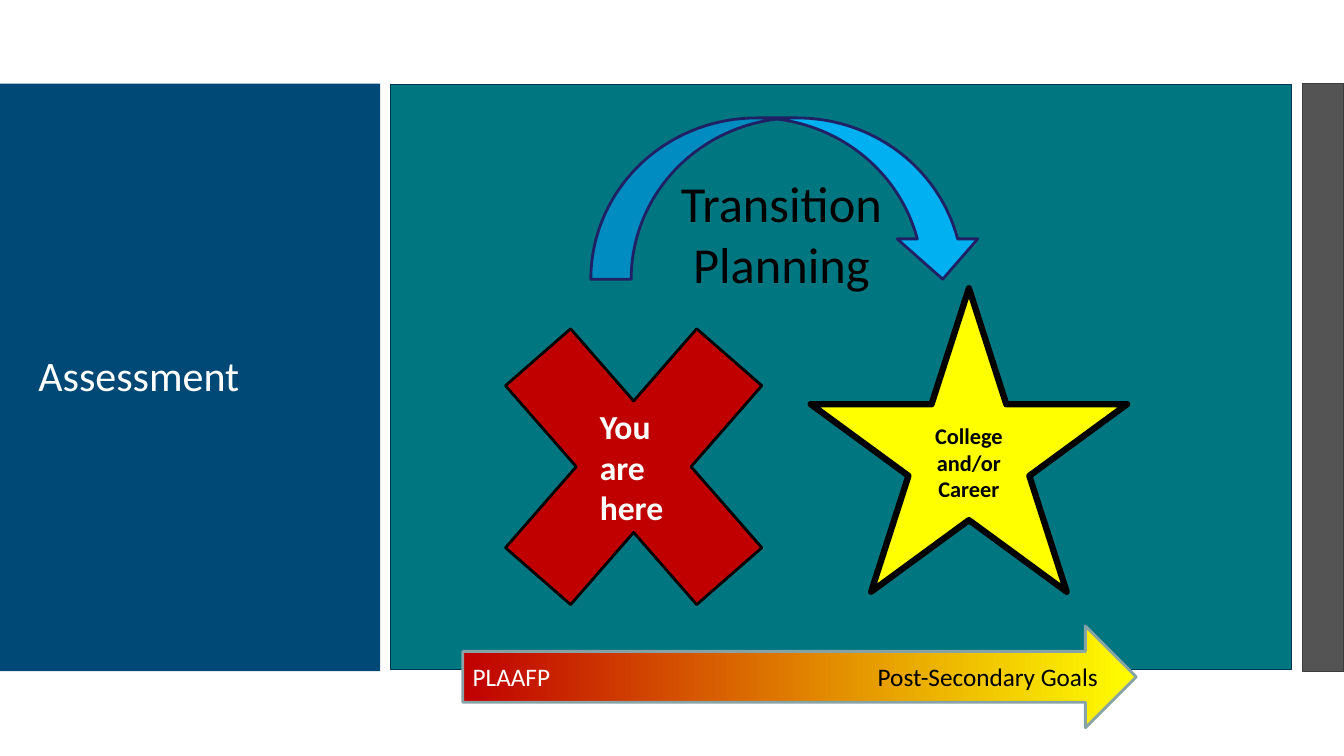
from pptx import Presentation
from pptx.dml.color import RGBColor
from pptx.enum.shapes import MSO_SHAPE
from pptx.enum.text import MSO_ANCHOR, MSO_AUTO_SIZE, PP_ALIGN
from pptx.oxml import parse_xml
from pptx.oxml.ns import nsdecls
from pptx.util import Inches, Pt

RECTANGLE = MSO_SHAPE.RECTANGLE
CROSS = MSO_SHAPE.MATH_MULTIPLY
STAR = MSO_SHAPE.STAR_5_POINT
CURVED_ARROW = MSO_SHAPE.CURVED_DOWN_ARROW
RIGHT_ARROW = MSO_SHAPE.RIGHT_ARROW
LEFT, CENTER = PP_ALIGN.LEFT, PP_ALIGN.CENTER
TOP, MIDDLE = MSO_ANCHOR.TOP, MSO_ANCHOR.MIDDLE
NO_AUTOFIT = MSO_AUTO_SIZE.NONE

FONT = "Calibri"
TITLE_ONLY = 5
COLORS = {
    "navy": "004976", "teal": "007681", "teal_edge": "003556",
    "gray": "545454", "gray_edge": "3D3D3D", "red": "C00000",
    "yellow": "FFFF00", "sky": "00B0F0", "indigo": "202064",
    "mist": "88A3A5", "black": "000000", "white": "FFFFFF",
}


def color(name):
    """Return the named palette colour."""
    return RGBColor.from_string(COLORS[name])


def inches(*values):
    """Convert several numbers to lengths."""
    return [Inches(value) for value in values]


def add_preset(slide, kind, box, fill=None, line=None, width=1, adjustments=()):
    """Add a flat preset shape in the given box."""
    shape = slide.shapes.add_shape(kind, *inches(*box))
    shape.shadow.inherit = False
    if fill:
        shape.fill.solid()
        shape.fill.fore_color.rgb = color(fill)
    if line:
        shape.line.color.rgb = color(line)
        shape.line.width = Pt(width)
    else:
        shape.line.fill.background()
    for index, value in enumerate(adjustments):
        shape.adjustments[index] = value
    return shape


def write_text(shape, *paragraphs, size, name="black", bold=False, align=LEFT,
               anchor=TOP, spacing=None, right_tab=None):
    """Fill a shape with paragraphs, each a list of (text, colour) runs or a string."""
    frame = shape.text_frame
    frame.word_wrap = True
    frame.auto_size = NO_AUTOFIT
    frame.vertical_anchor = anchor
    for index, content in enumerate(paragraphs):
        paragraph = frame.paragraphs[0] if index == 0 else frame.add_paragraph()
        paragraph.alignment = align
        if spacing:
            paragraph.line_spacing = spacing
        if right_tab:
            paragraph._p.get_or_add_pPr().append(parse_xml(
                f'<a:tabLst {nsdecls("a")}>'
                f'<a:tab pos="{Inches(right_tab)}" algn="r"/></a:tabLst>'))
        runs = [(content, name)] if isinstance(content, str) else content
        for text, run_color in runs:
            run = paragraph.add_run()
            run.text = text
            run.font.name = FONT
            run.font.size = Pt(size)
            run.font.bold = bold
            run.font.color.rgb = color(run_color)


def add_label(slide, box, *paragraphs, **text_format):
    """Add a text box."""
    write_text(slide.shapes.add_textbox(*inches(*box)), *paragraphs, **text_format)


def add_title_panel(slide, box):
    """Draw the navy panel with the slide title in front of it."""
    left, top, width, height = box
    add_preset(slide, RECTANGLE, box, "navy")
    title = slide.shapes.title
    title._element.getparent().append(title._element)
    title.left, title.top, title.width, title.height = inches(
        left + 0.28, top + 0.4, width - 0.55, height - 0.8)
    write_text(title, "Assessment", size=30, name="white", anchor=MIDDLE, spacing=0.9)


def add_journey(slide, box):
    """Draw the teal panel with the start, the goal and the way between them."""
    left, top, _, _ = box
    add_preset(slide, RECTANGLE, box, "teal", "teal_edge", 0.85)
    add_preset(slide, CROSS, (left + 0.59, top + 1.7, 3.65, 4.18),
               "red", "black", 2, [0.235])
    star = add_preset(slide, STAR, (left + 4.17, top + 2.02, 3.14, 3.01),
                      "yellow", "black", 4.5, [0.191, 1.051, 1.106])
    write_text(star, "College and/or Career", size=16, bold=True,
               align=CENTER, anchor=MIDDLE)
    add_preset(slide, CURVED_ARROW, (left + 1.99, top + 0.33, 3.89, 1.6),
               "sky", "indigo", 2, [0.25, 0.5, 0.25])
    add_label(slide, (left + 2.38, top + 0.82, 3, 1.32),
              "Transition", "Planning", size=36, align=CENTER)
    add_label(slide, (left + 1.98, top + 3.14, 1.09, 1.31),
              "You are here", size=24, name="white", bold=True)


def add_progress_arrow(slide, box):
    """Draw the gradient arrow from present levels to goals."""
    arrow = add_preset(slide, RIGHT_ARROW, box, line="mist", width=2,
                       adjustments=[0.5, 0.5])
    arrow.fill.gradient()
    arrow.fill.gradient_angle = 0
    for stop, position, name in zip(arrow.fill.gradient_stops, (0, 1), ("red", "yellow")):
        stop.position = position
        stop.color.rgb = color(name)
    write_text(arrow, [("PLAAFP\t", "white"), ("Post-Secondary Goals", "black")],
               size=18, anchor=MIDDLE, right_tab=6.2)


def main():
    """Build and save the slide."""
    presentation = Presentation()
    presentation.slide_width, presentation.slide_height = inches(13.33, 7.5)
    slide = presentation.slides.add_slide(presentation.slide_layouts[TITLE_ONLY])
    add_title_panel(slide, (0, 0.83, 3.77, 5.83))
    add_preset(slide, RECTANGLE, (12.92, 0.83, 0.41, 5.83), "gray", "gray_edge", 0.85)
    add_journey(slide, (3.87, 0.84, 8.94, 5.8))
    add_progress_arrow(slide, (4.59, 6.21, 6.68, 1.01))
    presentation.save("out.pptx")


if __name__ == "__main__":
    main()
